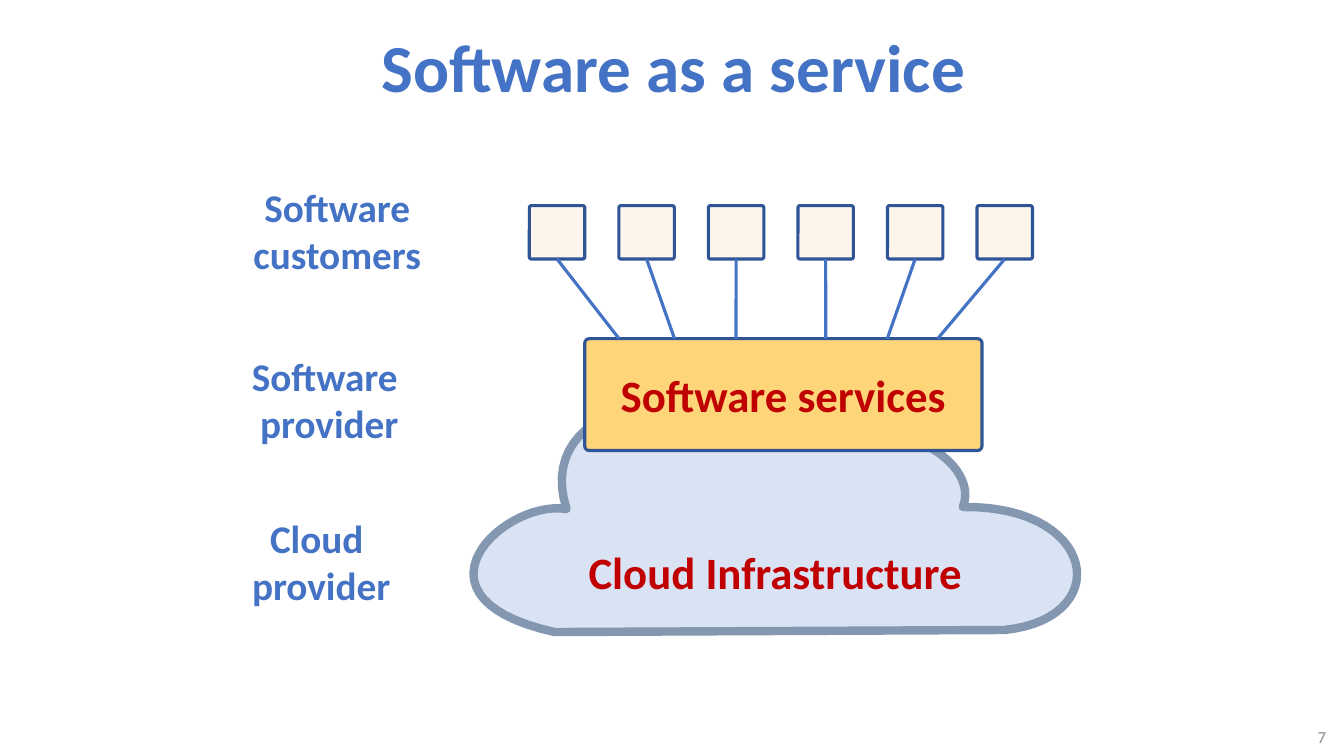
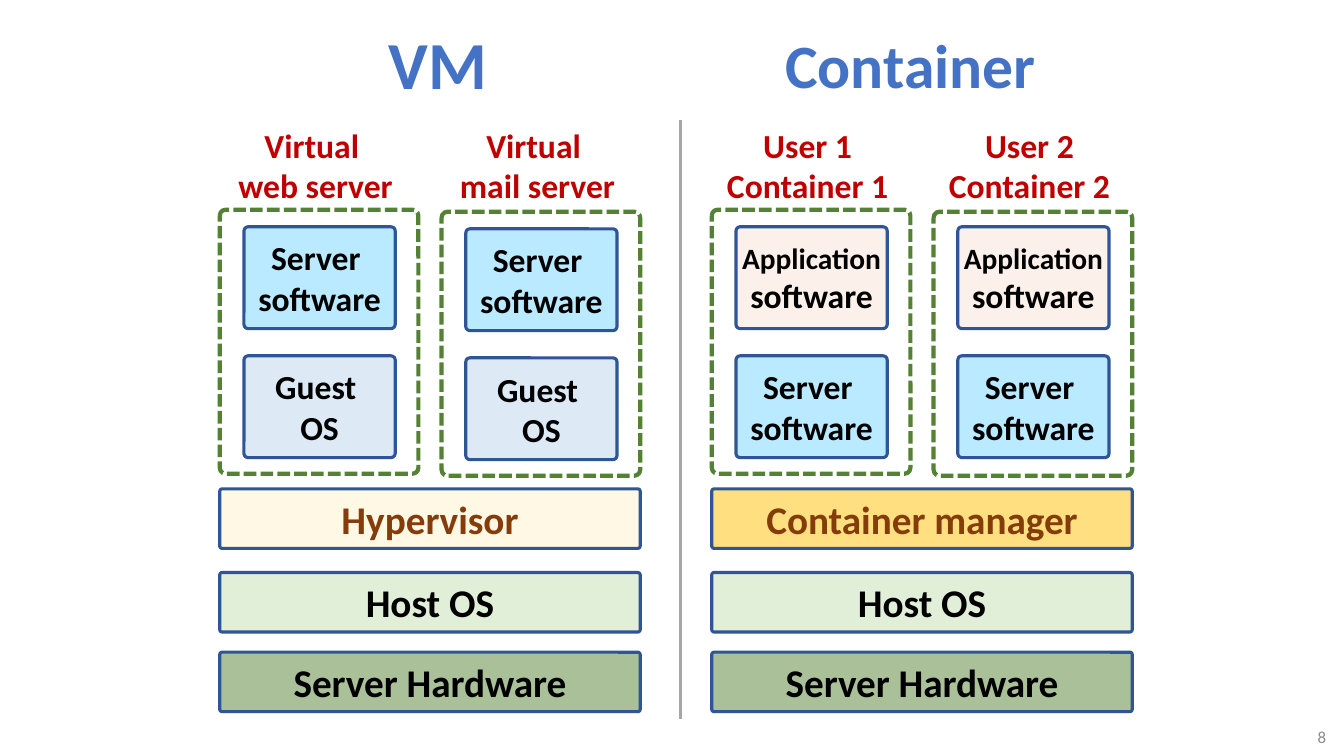
from dataclasses import dataclass
from typing import Optional

import pptx
import pptx.dml.color
import pptx.enum.dml
import pptx.enum.shapes
import pptx.enum.text
import pptx.oxml.ns
import pptx.oxml.xmlchemy
import pptx.util

# Shared style; the grid has 133.3 columns and 75 rows
CELL = pptx.util.Inches(0.1)
COLUMNS, ROWS = 133.3, 75
FONT = "Calibri"
BLUE, NAVY, RED, BROWN = "4472C4", "2F5597", "C00000", "843C0B"
BLACK, GREY, GREEN = "000000", "8C8C8C", "548235"
SKY, PEACH, ICE = "76D6FF", "FBE5D6", "BDD7EE"
OUTLINE = 2.25
CORNER = 0.04
CURVE_STEPS = 30

Point = tuple[float, float]
ALIGN = pptx.enum.text.PP_ALIGN
ANCHOR = pptx.enum.text.MSO_ANCHOR


@dataclass(frozen=True)
class Area:
    column: float
    row: float
    width: float
    height: float

    def lengths(self) -> list[int]:
        return [cells(n) for n in (self.column, self.row, self.width, self.height)]


@dataclass(frozen=True)
class Label:
    text: str
    size: float
    color: str = BLACK
    bold: bool = True
    first_size: Optional[float] = None


@dataclass(frozen=True)
class Box:
    label: Label
    fill: str


@dataclass(frozen=True)
class Stack:
    column: float
    headers: tuple[str, str]
    upper: Box
    lower: Box
    manager: Box
    drop: float  # how much lower the second group's boxes sit


def cells(count: float) -> int:
    return round(count * CELL)


def rgb(value: str) -> pptx.dml.color.RGBColor:
    return pptx.dml.color.RGBColor.from_string(value)


def write(shape, label: Label, align=ALIGN.CENTER, anchor=ANCHOR.MIDDLE, wrap=True) -> None:
    frame = shape.text_frame
    frame.word_wrap = wrap
    frame.vertical_anchor = anchor
    paragraph = frame.paragraphs[0]
    paragraph.text = label.text.replace("\n", "\v")
    paragraph.alignment = align
    paragraph.font.name = FONT
    paragraph.font.size = pptx.util.Pt(label.size)
    paragraph.font.bold = label.bold
    paragraph.font.color.rgb = rgb(label.color)
    if label.first_size:
        paragraph.runs[0].font.size = pptx.util.Pt(label.first_size)


def add_text(slide, area: Area, label: Label, **layout) -> None:
    write(slide.shapes.add_textbox(*area.lengths()), label, **layout)


def paint(shape, fill: Optional[str], line: str, width: float, opacity: int = 100) -> None:
    shape.shadow.inherit = False
    shape.line.color.rgb = rgb(line)
    shape.line.width = pptx.util.Pt(width)
    if fill is None:
        shape.fill.background()
        return
    shape.fill.solid()
    shape.fill.fore_color.rgb = rgb(fill)
    if opacity < 100:
        qn = pptx.oxml.ns.qn
        color = shape._element.spPr.find(qn("a:solidFill")).find(qn("a:srgbClr"))
        alpha = pptx.oxml.xmlchemy.OxmlElement("a:alpha")
        alpha.set("val", str(opacity * 1000))
        color.append(alpha)


def add_box(slide, area: Area, fill: Optional[str], label: Optional[Label] = None,
            line: str = NAVY, width: float = OUTLINE, opacity: int = 50,
            corner: float = CORNER):
    kind = pptx.enum.shapes.MSO_SHAPE.ROUNDED_RECTANGLE
    shape = slide.shapes.add_shape(kind, *area.lengths())
    shape.adjustments[0] = corner
    paint(shape, fill, line, width, opacity)
    if label:
        frame = shape.text_frame
        frame.margin_left = frame.margin_right = frame.margin_top = frame.margin_bottom = 0
        write(shape, label, wrap=False)
    return shape


def add_line(slide, start: Point, end: Point, color: str) -> None:
    kind = pptx.enum.shapes.MSO_CONNECTOR.STRAIGHT
    connector = slide.shapes.add_connector(kind, *(cells(n) for n in start + end))
    connector.line.color.rgb = rgb(color)
    connector.line.width = pptx.util.Pt(OUTLINE)
    connector._element.spPr.append(pptx.oxml.xmlchemy.OxmlElement("a:effectLst"))


def curve(start: Point, first: Point, second: Point, end: Point) -> list[Point]:
    """Points along a cubic curve, without its start."""
    points = []
    for step in range(1, CURVE_STEPS + 1):
        t = step / CURVE_STEPS
        weights = ((1 - t) ** 3, 3 * t * (1 - t) ** 2, 3 * t * t * (1 - t), t ** 3)
        controls = (start, first, second, end)
        points.append(tuple(sum(w * p[axis] for w, p in zip(weights, controls))
                            for axis in (0, 1)))
    return points


def add_slide(presentation, title: Label, title_area: Area, number: int):
    slide = presentation.slides.add_slide(presentation.slide_layouts[6])
    add_text(slide, title_area, title)
    add_text(slide, Area(122, 71.8, 10.5, 2.6), Label(str(number), 12, GREY, bold=False),
             align=ALIGN.RIGHT)
    return slide


def add_cloud(slide) -> None:
    left, right = (56.2, 50.5), (95.5, 50.3)
    base_left, base_right, notch = (55, 62.7), (99.6, 62.5), (78.6, 44.4)
    outline = [
        *curve(left, (50, 49.5), (39.6, 59.3), base_left),
        base_right,
        *curve(base_right, (110.6, 61.4), (108.9, 50.1), right),
        *curve(right, (97.3, 45.9), (88.7, 39.9), notch),
        *curve(notch, (71.6, 36.7), (52.5, 39), left),
    ]
    builder = slide.shapes.build_freeform(cells(left[0]), cells(left[1]), scale=1.0)
    builder.add_line_segments([(cells(x), cells(y)) for x, y in outline], close=True)
    cloud = builder.convert_to_shape()
    paint(cloud, "DAE3F3", "8497B0", 6)
    cloud.text_frame.margin_top = cells(11.2)
    write(cloud, Label("Cloud Infrastructure", 32, RED))


def build_service_slide(presentation) -> None:
    slide = add_slide(presentation, Label("Software as a service", 48, BLUE),
                      Area(21.8, 1.3, 90, 10.4), 7)
    add_cloud(slide)

    # Names of the three layers
    for text, column, row, width in (
        ("Cloud \nprovider", 17.3, 50.5, 29.1),
        ("Software \nprovider", 18.5, 34.5, 28.3),
        ("Software customers", 17.6, 17.7, 31.7),
    ):
        add_text(slide, Area(column, row, width, 10.4), Label(text, 28, BLUE),
                 anchor=ANCHOR.TOP)

    services = Area(58, 33.6, 39.4, 11.1)
    add_box(slide, services, "FFD579", Label("Software services", 32, RED), opacity=100)

    # Customers, each joined to the services
    for index, end in enumerate((61.4, 66.9, 73, 81.9, 88, 93)):
        customer = Area(52.5 + 8.88 * index, 20.4, 5.5, 5.3)
        add_box(slide, customer, "FDEADA")
        center = customer.column + customer.width / 2
        add_line(slide, (center, customer.row + customer.height), (end, services.row), BLUE)


def add_stack(slide, stack: Stack) -> None:
    # Two groups side by side
    for index, header in enumerate(stack.headers):
        column = stack.column + 22 * index
        for box, row in ((stack.upper, 22.5), (stack.lower, 35.3)):
            area = Area(column + 2.4, row + stack.drop * index, 15, 10.1)
            add_box(slide, area, box.fill, box.label)
        group = add_box(slide, Area(column, 20.8 + 0.2 * index, 19.7, 26.2), None,
                        line=GREEN, width=3, corner=0.03)
        group.line.dash_style = pptx.enum.dml.MSO_LINE.SQUARE_DOT
        add_text(slide, Area(column + 0.4, 11.9, 18.2, 9.1), Label(header, 24, RED),
                 anchor=ANCHOR.TOP, wrap=False)

    # Shared layers below
    layers = (
        (stack.manager, 48.5),
        (Box(Label("Host OS", 28), "C5E0B4"), 56.8),
        (Box(Label("Server Hardware", 28), GREEN), 64.7),
    )
    for box, row in layers:
        add_box(slide, Area(stack.column, row, 41.7, 5.9), box.fill, box.label)


def build_comparison_slide(presentation) -> None:
    slide = add_slide(presentation, Label("VM", 48, BLUE), Area(21.8, 0, 43.3, 12.5), 8)
    add_text(slide, Area(70.2, 1.1, 40.2, 10.4), Label("Container", 44, BLUE))
    server = Box(Label("Server \nsoftware", 24), SKY)
    machines = Stack(
        21.8, ("Virtual \nweb server", "Virtual \nmail server"),
        upper=server,
        lower=Box(Label("Guest \nOS", 24), ICE),
        manager=Box(Label("Hypervisor", 28, BROWN), "FFF2CC"),
        drop=0.2,
    )
    containers = Stack(
        70.6, ("User 1\nContainer 1", "User 2\nContainer 2"),
        upper=Box(Label("Application\nsoftware", 24, first_size=21), PEACH),
        lower=server,
        manager=Box(Label("Container manager", 28, BROWN), "FFC000"),
        drop=0,
    )
    for stack in (machines, containers):
        add_stack(slide, stack)
    add_line(slide, (67.5, 11.9), (67.5, 71.3), "A6A6A6")


def main() -> None:
    presentation = pptx.Presentation()
    presentation.slide_width = cells(COLUMNS)
    presentation.slide_height = cells(ROWS)
    build_service_slide(presentation)
    build_comparison_slide(presentation)
    presentation.save("out.pptx")


if __name__ == "__main__":
    main()
